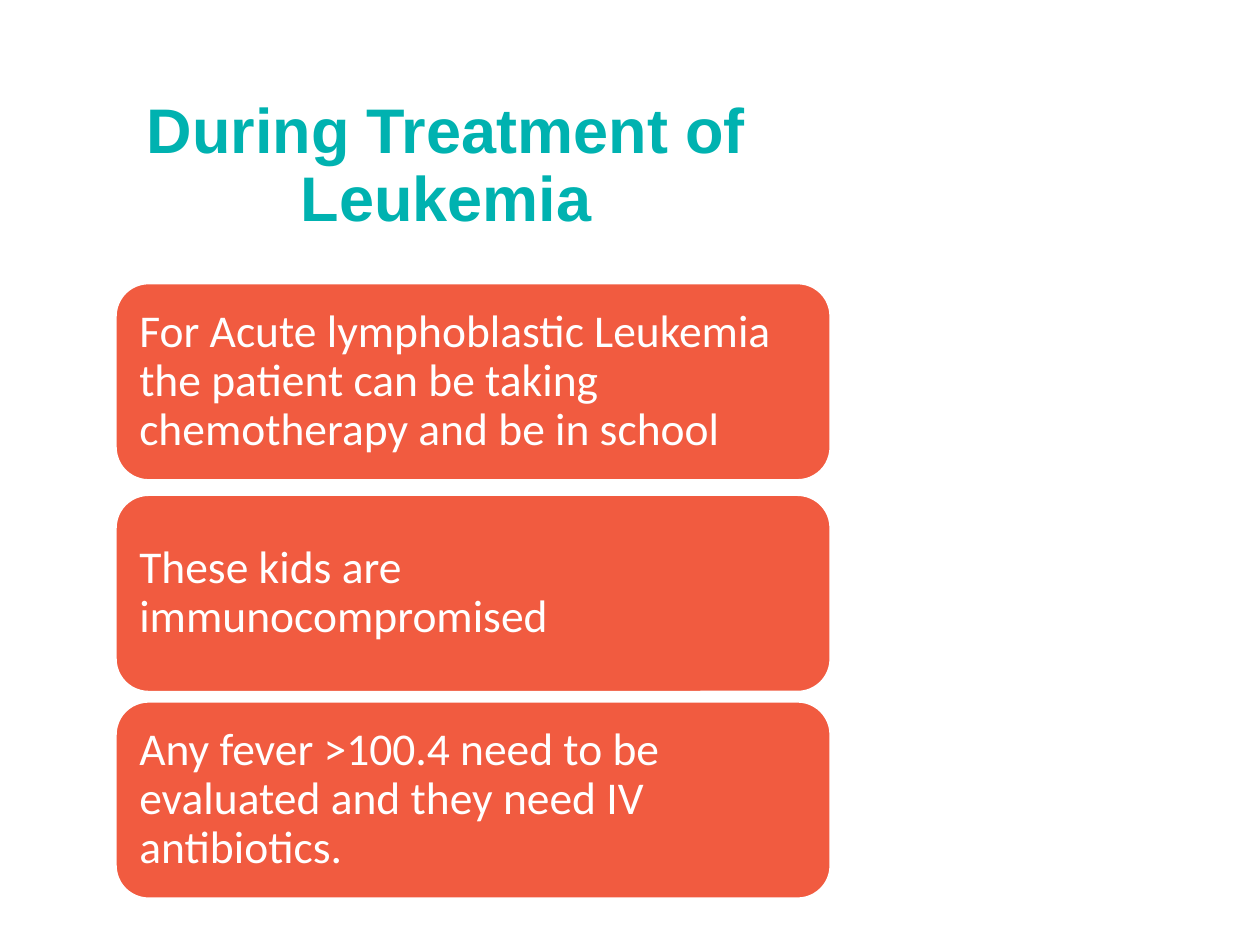
"""Build the slide on care during treatment of leukemia."""
from dataclasses import dataclass

from pptx import Presentation
from pptx.dml.color import RGBColor
from pptx.enum.shapes import MSO_SHAPE
from pptx.enum.text import MSO_ANCHOR, PP_ALIGN
from pptx.util import Inches, Pt


@dataclass(frozen=True)
class Theme:
    teal: RGBColor = RGBColor.from_string("00B2B0")
    coral: RGBColor = RGBColor.from_string("F15B40")
    white: RGBColor = RGBColor.from_string("FFFFFF")
    title_font: str = "Arial"
    body_font: str = "Calibri"
    title_size: Pt = Pt(36)
    body_size: Pt = Pt(26)


theme = Theme()


def write_text(shape, text, font_name, size, color, alignment, bold=False):
    frame = shape.text_frame
    frame.word_wrap = True
    frame.vertical_anchor = MSO_ANCHOR.MIDDLE
    paragraph = frame.paragraphs[0]
    paragraph.text = text
    paragraph.alignment = alignment
    paragraph.line_spacing = 0.9
    paragraph.font.name = font_name
    paragraph.font.size = size
    paragraph.font.bold = bold
    paragraph.font.color.rgb = color


presentation = Presentation()
presentation.slide_width = Inches(10)
presentation.slide_height = Inches(7.5)
slide = presentation.slides.add_slide(presentation.slide_layouts[6])

title = slide.shapes.add_textbox(Inches(0), Inches(0.67), Inches(7.08), Inches(1.31))
write_text(title, "During Treatment of Leukemia", theme.title_font,
           theme.title_size, theme.teal, PP_ALIGN.CENTER, bold=True)

cards = [
    (2.25, "For Acute lymphoblastic Leukemia the patient can be taking "
           "chemotherapy and be in school"),
    (3.93, "These kids are immunocompromised"),
    (5.57, "Any fever >100.4 need to be evaluated and they need IV antibiotics."),
]
for top, text in cards:
    card = slide.shapes.add_shape(MSO_SHAPE.ROUNDED_RECTANGLE, Inches(0.92),
                                  Inches(top), Inches(5.67), Inches(1.56))
    card.shadow.inherit = False
    card.fill.solid()
    card.fill.fore_color.rgb = theme.coral
    card.line.color.rgb = theme.white
    card.line.width = Pt(1)
    frame = card.text_frame
    frame.margin_left = frame.margin_right = Inches(0.11)
    frame.margin_top = frame.margin_bottom = Inches(0.11)
    write_text(card, text, theme.body_font, theme.body_size, theme.white, PP_ALIGN.LEFT)

presentation.save("out.pptx")
